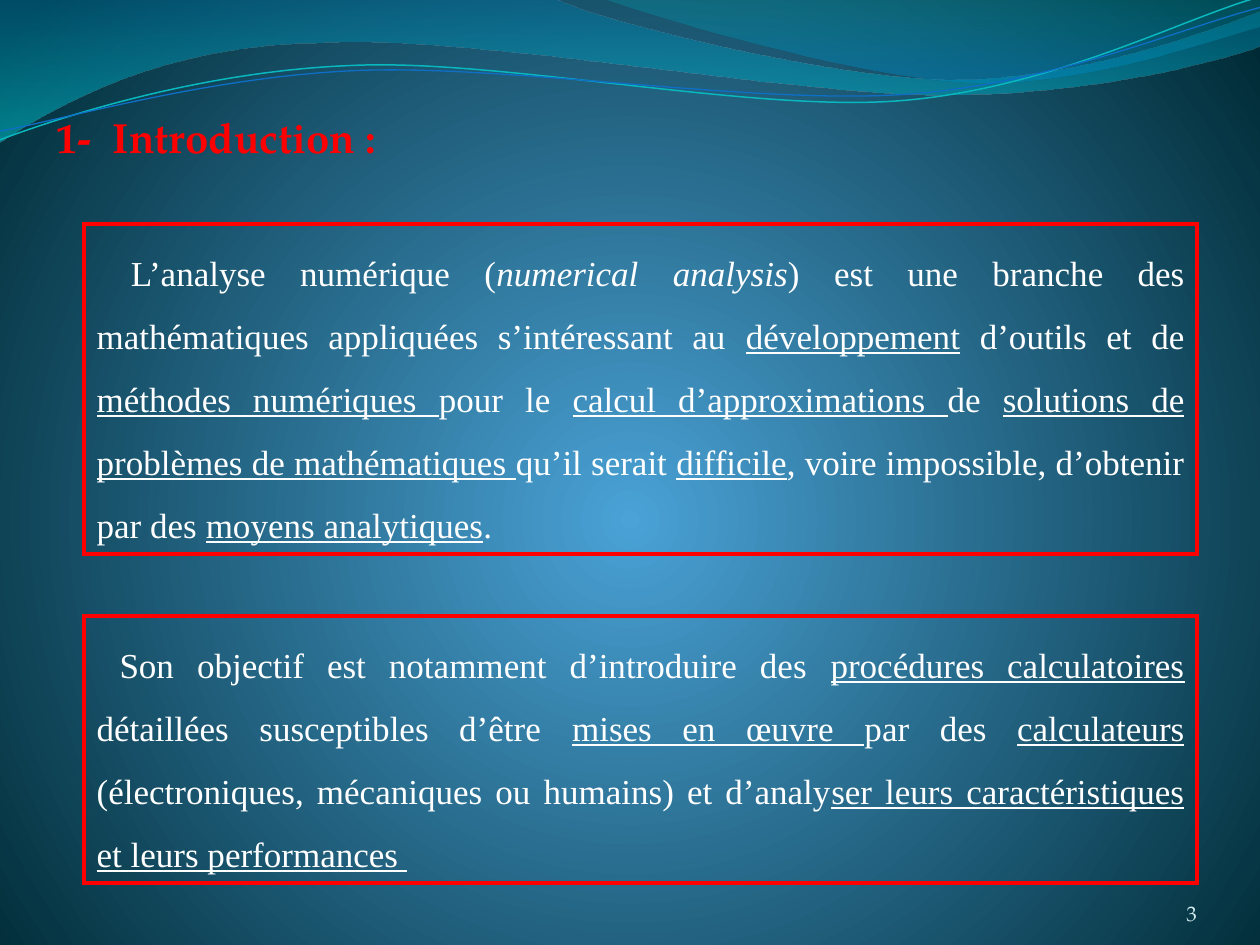
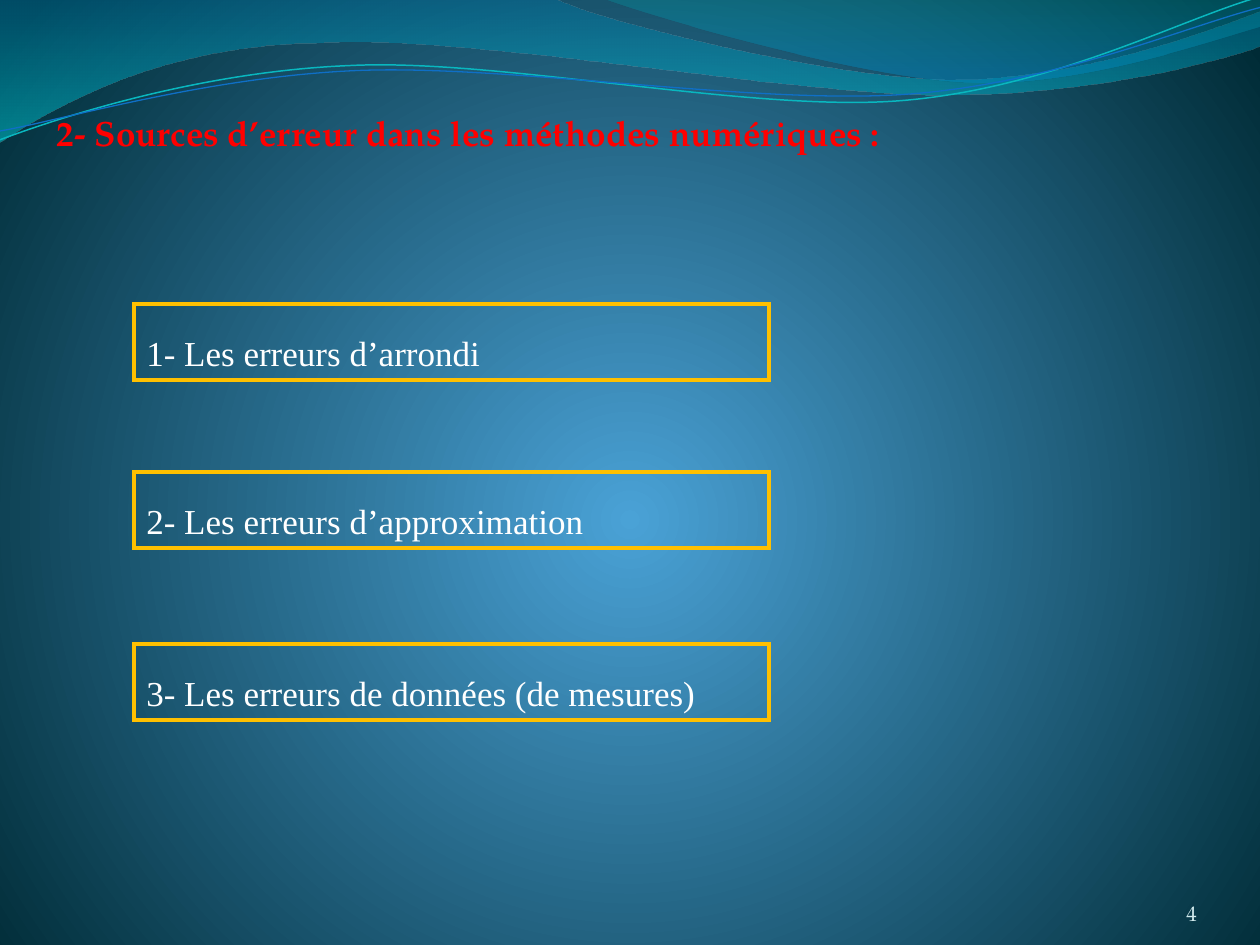
from lxml.etree import SubElement
from pptx import Presentation
from pptx.dml.color import RGBColor
from pptx.enum.shapes import MSO_SHAPE
from pptx.enum.text import MSO_ANCHOR, MSO_AUTO_SIZE, PP_ALIGN
from pptx.oxml.ns import qn
from pptx.util import Cm, Pt

COLORS = {
    "glow": "4AA2D6", "night": "002B36", "title": "FF0000", "definition": "FF0000",
    "source": "FFC000", "text": "FFFFFF", "number": "D1EAED",
    "wave_blue": "0074A0", "wave_cyan": "00C4CD", "crest_blue": "008ABF",
    "crest_teal": "00A0A8", "strand_teal": "09B7BF", "strand_blue": "0F6FC6",
}
HEADING_FONT, BODY_FONT = "TeX Gyre Pagella", "Times New Roman"
WAVE_UNIT = Cm(0.0254)
STRAND_ROTATION = 357.3

WAVE = ((0, 0), [
    (440, -1), (476, 17, 664, 63, 758, 63), (853, 63, 958, 26, 1000, 9),
    (1001, 36), (983, 44, 870, 76, 746, 75), (622, 75, 382, 28, 257, 34),
    (129, 35, 46, 83, -1, 113), (0, 0)])
CREST = ((479, -1), [
    (509, 11, 682, 62, 769, 65), (856, 69, 961, 32, 1000, 21), (1000, 0), (479, -1)])
TEAL_STRAND = ((-2, 87.4), [
    (46.8, 71.7, 158.4, 40.9, 277.5, 41.6), (395.7, 41.1, 591.4, 93.4, 711.7, 90.1),
    (832, 86.7, 939.5, 35.7, 1000.3, 21.6)])
BLUE_STRAND = ((-1.6, 80.4), [
    (45.8, 74.6, 164.3, 45.2, 283.4, 45.8), (403.5, 46.5, 595.8, 87.6, 716, 85.2),
    (835.3, 82.8, 942.3, 41.8, 1001.9, 29.6)])

NUMERICAL_ANALYSIS = [
    ("L’analyse numérique (", ""), ("numerical analysis", "italic"),
    (") est une branche des mathématiques appliquées s’intéressant au ", ""),
    ("développement", "underline"), (" d’outils et de ", ""),
    ("méthodes numériques ", "underline"), ("pour le ", ""),
    ("calcul d’approximations ", "underline"), ("de ", ""),
    ("solutions de problèmes de mathématiques ", "underline"), ("qu’il serait ", ""),
    ("difficile", "underline"), (", voire impossible, d’obtenir par des ", ""),
    ("moyens analytiques", "underline"), (".", "")]
OBJECTIVE = [
    ("Son objectif est notamment d’introduire des ", ""),
    ("procédures calculatoires ", "underline"), ("détaillées susceptibles d’être ", ""),
    ("mises en œuvre ", "underline"), ("par des ", ""), ("calculateurs", "underline"),
    (" (électroniques, mécaniques ou humains) et d’analy", ""),
    ("ser leurs caractéristiques et leurs performances ", "underline")]
ERROR_SOURCES = [
    (0, "1- Les erreurs d’arrondi"),
    (3.39, "2- Les erreurs d’approximation"),
    (6.85, "3- Les erreurs de données (de mesures)")]


def rgb(name):
    """Return the named colour of the palette."""
    return RGBColor.from_string(COLORS[name])


def write_text(shape, text, font=BODY_FONT, size=20, color="text", bold=False,
               align=PP_ALIGN.LEFT, spacing=None, indent=0, tab=0,
               anchor=MSO_ANCHOR.TOP):
    """Write a string, or a list of (text, style) runs, as one paragraph."""
    frame = shape.text_frame
    frame.word_wrap = True
    frame.vertical_anchor = anchor
    paragraph = frame.paragraphs[0]
    paragraph.alignment = align
    properties = paragraph._p.get_or_add_pPr()
    if spacing:
        paragraph.line_spacing = spacing
    if indent:
        properties.set("indent", str(Cm(indent)))
    if tab:
        tabs = SubElement(properties, qn("a:tabLst"))
        SubElement(tabs, qn("a:tab"), pos=str(Cm(tab)), algn="l")
    for words, style in [(text, "")] if isinstance(text, str) else text:
        run = paragraph.add_run()
        run.text = words
        run.font.name, run.font.size, run.font.bold = font, Pt(size), bold
        run.font.color.rgb = rgb(color)
        if style:
            setattr(run.font, style, True)


def set_gradient(fill, owner, stops, angle=None):
    """Fill with (position, colour, opacity) stops, radially if there is no angle."""
    fill.gradient()
    gradient = owner.find(".//" + qn("a:gradFill"))
    for child in list(gradient):
        gradient.remove(child)
    stop_list = SubElement(gradient, qn("a:gsLst"))
    for position, color, opacity in stops:
        stop = SubElement(stop_list, qn("a:gs"), pos=str(position * 1000))
        value = SubElement(stop, qn("a:srgbClr"), val=COLORS[color])
        if opacity < 100:
            SubElement(value, qn("a:alpha"), val=str(opacity * 1000))
    if angle is None:
        path = SubElement(gradient, qn("a:path"), path="circle")
        SubElement(path, qn("a:fillToRect"), l="50000", t="55000", r="50000", b="45000")
    else:
        SubElement(gradient, qn("a:lin"), ang=str(angle * 60000), scaled="1")


def add_curve(slide, outline, closed):
    """Add a freeform whose six-number segments are Bezier curves."""
    start, segments = outline
    builder = slide.shapes.build_freeform(*(value * WAVE_UNIT for value in start))
    for segment in segments:
        scaled = [value * WAVE_UNIT for value in segment]
        builder.add_line_segments(list(zip(scaled[::2], scaled[1::2])), close=False)
    shape = builder.convert_to_shape()
    shape.shadow.inherit = False
    path = shape.element.find(".//" + qn("a:path"))
    lines = iter(path.findall(qn("a:lnTo")))
    for segment in segments:
        corners = [next(lines) for _ in range(len(segment) // 2)]
        if len(corners) == 3:
            curve = SubElement(path, qn("a:cubicBezTo"))
            corners[0].addprevious(curve)
            for corner in corners:
                curve.append(corner[0])
                path.remove(corner)
    if closed:
        SubElement(path, qn("a:close"))
    return shape


def add_waves(slide):
    """Draw two translucent waves and two thin strands, and return them."""
    shapes = []
    waves = [(WAVE, [(0, "wave_blue", 45), (100, "wave_cyan", 55)], 90),
             (CREST, [(20, "crest_blue", 45), (100, "crest_teal", 30)], 270)]
    for outline, stops, angle in waves:
        shape = add_curve(slide, outline, True)
        shape.line.fill.background()
        set_gradient(shape.fill, shape.element, stops, angle)
        shapes.append(shape)
    for outline, color, width in [(TEAL_STRAND, "strand_teal", 0.85),
                                  (BLUE_STRAND, "strand_blue", 0.75)]:
        shape = add_curve(slide, outline, False)
        shape.fill.background()
        shape.line.color.rgb = rgb(color)
        shape.line.width = Pt(width)
        shape.rotation = STRAND_ROTATION
        shapes.append(shape)
    return shapes


def decorate_master(master, slide):
    """Set the shared background and move the waves drawn on a slide to the master."""
    set_gradient(master.background.fill, master.element,
                 [(0, "glow", 100), (100, "night", 100)])
    first_placeholder = master.placeholders[0].element
    for number, shape in enumerate(add_waves(slide), start=101):
        shape.element.find(".//" + qn("p:cNvPr")).set("id", str(number))
        first_placeholder.addprevious(shape.element)


def add_title(slide, box, text, size, tab=0):
    """Place and format the title placeholder."""
    title = slide.shapes.title
    title.left, title.top, title.width, title.height = map(Cm, box)
    title.text_frame.auto_size = MSO_AUTO_SIZE.SHAPE_TO_FIT_TEXT
    write_text(title, text, font=HEADING_FONT, size=size, color="title", bold=True,
               tab=tab)


def add_number(slide, box, number):
    """Write the slide number in the lower right corner."""
    shape = slide.shapes.add_textbox(*map(Cm, box))
    frame = shape.text_frame
    frame.margin_left = frame.margin_top = frame.margin_right = frame.margin_bottom = 0
    write_text(shape, str(number), font=HEADING_FONT, size=12, color="number",
               align=PP_ALIGN.RIGHT, anchor=MSO_ANCHOR.BOTTOM)


def add_frame(slide, box, text, color, indent=0):
    """Add a sharp-cornered outlined rectangle with justified text."""
    shape = slide.shapes.add_shape(MSO_SHAPE.RECTANGLE, *map(Cm, box))
    shape.shadow.inherit = False
    shape.fill.background()
    shape.line.color.rgb = rgb(color)
    shape.line.width = Pt(2.25)
    SubElement(shape.element.find(".//" + qn("a:ln")), qn("a:miter"), lim="800000")
    shape.text_frame.auto_size = MSO_AUTO_SIZE.SHAPE_TO_FIT_TEXT
    write_text(shape, text, align=PP_ALIGN.JUSTIFY, spacing=1.5, indent=indent)


def add_base_slide(presentation, number):
    """Add a title-only slide with its number."""
    slide = presentation.slides.add_slide(presentation.slide_layouts[5])
    add_number(slide, (22.02, 17.65, 2.11, 1.02), number)
    return slide


def add_definitions(slide, box):
    """Frame the definition and, below it, the objective."""
    left, top, width, height = box
    objective_height = 5.38
    add_frame(slide, (left, top, width, 6.65), NUMERICAL_ANALYSIS, "definition", 0.69)
    add_frame(slide, (left, top + height - objective_height, width, objective_height),
              OBJECTIVE, "definition", 0.46)


def add_error_sources(slide, box):
    """Stack one frame per source of error from the top of the box."""
    left, top, width, frame_height = box
    for offset, source in ERROR_SOURCES:
        add_frame(slide, (left, top + offset, width, frame_height), source, "source")


def main():
    """Build and save both slides."""
    presentation = Presentation()
    presentation.slide_width, presentation.slide_height = Cm(25.4), Cm(19.05)
    introduction = add_base_slide(presentation, 3)
    decorate_master(presentation.slide_master, introduction)
    add_title(introduction, (0.89, 2.13, 8, 1.27), "1-\tIntroduction :", 24, tab=1.13)
    add_definitions(introduction, (1.7, 4.52, 22.43, 13.28))
    sources = add_base_slide(presentation, 4)
    add_title(sources, (0.89, 2.13, 17.6, 1.12),
              "2- Sources d’erreur dans les méthodes numériques :", 20)
    add_error_sources(sources, (2.7, 6.13, 12.8, 1.53))
    presentation.save("out.pptx")


if __name__ == "__main__":
    main()
